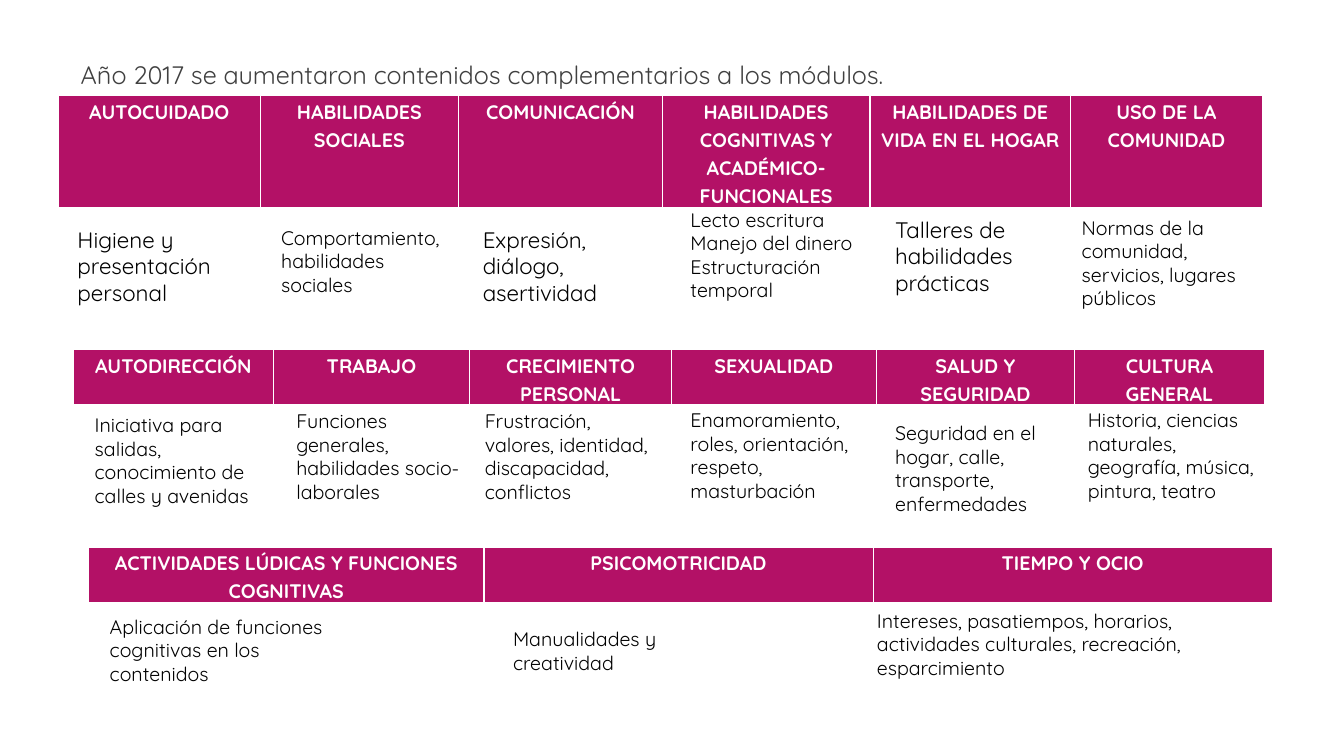
"""Slide with three rows of training modules and their added contents."""
from lxml.etree import SubElement
from pptx import Presentation
from pptx.dml.color import RGBColor
from pptx.enum.text import MSO_ANCHOR, MSO_AUTO_SIZE, PP_ALIGN
from pptx.oxml.ns import qn
from pptx.util import Inches, Pt

FONT = "Quicksand"
COLORS = {"head": "B31166", "white": "FFFFFF", "title": "404040", "text": "000000"}


def write(para, text, size, color, bold=False):
    run = para.add_run()
    run.text = text
    run.font.name = FONT
    run.font.size = Pt(size)
    run.font.bold = bold
    run.font.color.rgb = RGBColor.from_string(COLORS[color])


def edge(cell, side, width):
    line = SubElement(cell._tc.get_or_add_tcPr(), qn("a:" + side), w=str(Pt(width)))
    fill = SubElement(line, qn("a:solidFill"))
    SubElement(fill, qn("a:srgbClr"), val=COLORS["white"])


deck = Presentation()
deck.slide_width = Inches(13.33)
deck.slide_height = Inches(7.5)
slide = deck.slides.add_slide(deck.slide_layouts[5])

title = slide.shapes.title
title.left, title.top = Inches(0.7), Inches(0.54)
title.width, title.height = Inches(12.09), Inches(0.42)
frame = title.text_frame
frame.word_wrap = True
frame.auto_size = MSO_AUTO_SIZE.NONE
frame.vertical_anchor = MSO_ANCHOR.TOP
para = frame.paragraphs[0]
para.alignment = PP_ALIGN.LEFT
write(para, "Año 2017 se aumentaron contenidos complementarios a los módulos.", 18, "title")

bands = [
    (0.58, 0.95, 1.07, [
        ("AUTOCUIDADO", 2), ("HABILIDADES SOCIALES", 1.97), ("COMUNICACIÓN", 2.02),
        ("HABILIDADES COGNITIVAS Y ACADÉMICO-FUNCIONALES", 2.06),
        ("HABILIDADES DE VIDA EN EL HOGAR", 1.99), ("USO DE LA COMUNIDAD", 1.9)]),
    (0.73, 3.47, 0.54, [
        ("AUTODIRECCIÓN", 1.98), ("TRABAJO", 1.95), ("CRECIMIENTO PERSONAL", 2),
        ("SEXUALIDAD", 2.03), ("SALUD Y SEGURIDAD", 1.97), ("CULTURA GENERAL", 1.88)]),
    (0.88, 5.43, 0.54, [
        ("ACTIVIDADES LÚDICAS Y FUNCIONES COGNITIVAS", 3.92),
        ("PSICOMOTRICIDAD", 3.86), ("TIEMPO Y OCIO", 3.96)]),
]
for left, top, height, heads in bands:
    total = sum(width for _, width in heads)
    table = slide.shapes.add_table(
        1, len(heads), Inches(left), Inches(top), Inches(total), Inches(height)).table
    table.horz_banding = False
    for col, (head, width) in enumerate(heads):
        table.columns[col].width = Inches(width)
        cell = table.cell(0, col)
        cell.margin_left = cell.margin_right = Inches(0.07)
        cell.margin_top = cell.margin_bottom = 0
        for side, weight in (("lnL", 1), ("lnR", 1), ("lnT", 1), ("lnB", 3)):
            edge(cell, side, weight)
        cell.fill.solid()
        cell.fill.fore_color.rgb = RGBColor.from_string(COLORS["head"])
        para = cell.text_frame.paragraphs[0]
        para.alignment = PP_ALIGN.CENTER
        para.line_spacing = 1.15
        write(para, head, 14, "white", True)

notes = [
    (0.67, 2.19, 1.85, 0.91, 16, ["Higiene y presentación personal"]),
    (2.69, 2.19, 1.85, 0.81, 14, ["Comportamiento, habilidades sociales"]),
    (4.69, 2.19, 1.85, 0.91, 16, ["Expresión, diálogo, asertividad"]),
    (6.75, 2.01, 1.85, 1.28, 14,
     ["Lecto escritura", "Manejo del dinero", "Estructuración temporal"]),
    (8.78, 2.09, 1.85, 0.91, 16, ["Talleres de habilidades prácticas"]),
    (10.63, 2.09, 1.85, 1.04, 14, ["Normas de la comunidad, servicios, lugares públicos"]),
    (0.84, 4.05, 1.85, 1.04, 14,
     ["Iniciativa para salidas, conocimiento de calles y avenidas"]),
    (2.84, 4.01, 1.85, 1.04, 14, ["Funciones generales, habilidades socio-laborales"]),
    (4.71, 4.01, 1.85, 1.28, 14,
     ["Frustración, valores, identidad, discapacidad, conflictos"]),
    (6.75, 4, 1.85, 1.28, 14,
     ["Enamoramiento, roles, orientación, respeto, masturbación"]),
    (8.78, 4.13, 1.85, 1.04, 14,
     ["Seguridad en el hogar, calle, transporte, enfermedades"]),
    (10.69, 4, 1.85, 1.28, 14,
     ["Historia, ciencias naturales, geografía, música, pintura, teatro"]),
    (0.99, 6.05, 2.43, 0.81, 14, ["Aplicación de funciones cognitivas en los contenidos"]),
    (4.99, 6.17, 2.43, 0.57, 14, ["Manualidades y creatividad"]),
    (8.6, 5.99, 3.94, 0.81, 14,
     ["Intereses, pasatiempos, horarios, actividades culturales, recreación, esparcimiento"]),
]
for left, top, width, height, size, lines in notes:
    box = slide.shapes.add_textbox(Inches(left), Inches(top), Inches(width), Inches(height))
    frame = box.text_frame
    frame.word_wrap = True
    frame.auto_size = MSO_AUTO_SIZE.SHAPE_TO_FIT_TEXT
    for row, line in enumerate(lines):
        para = frame.add_paragraph() if row else frame.paragraphs[0]
        write(para, line, size, "text")

deck.save("out.pptx")
